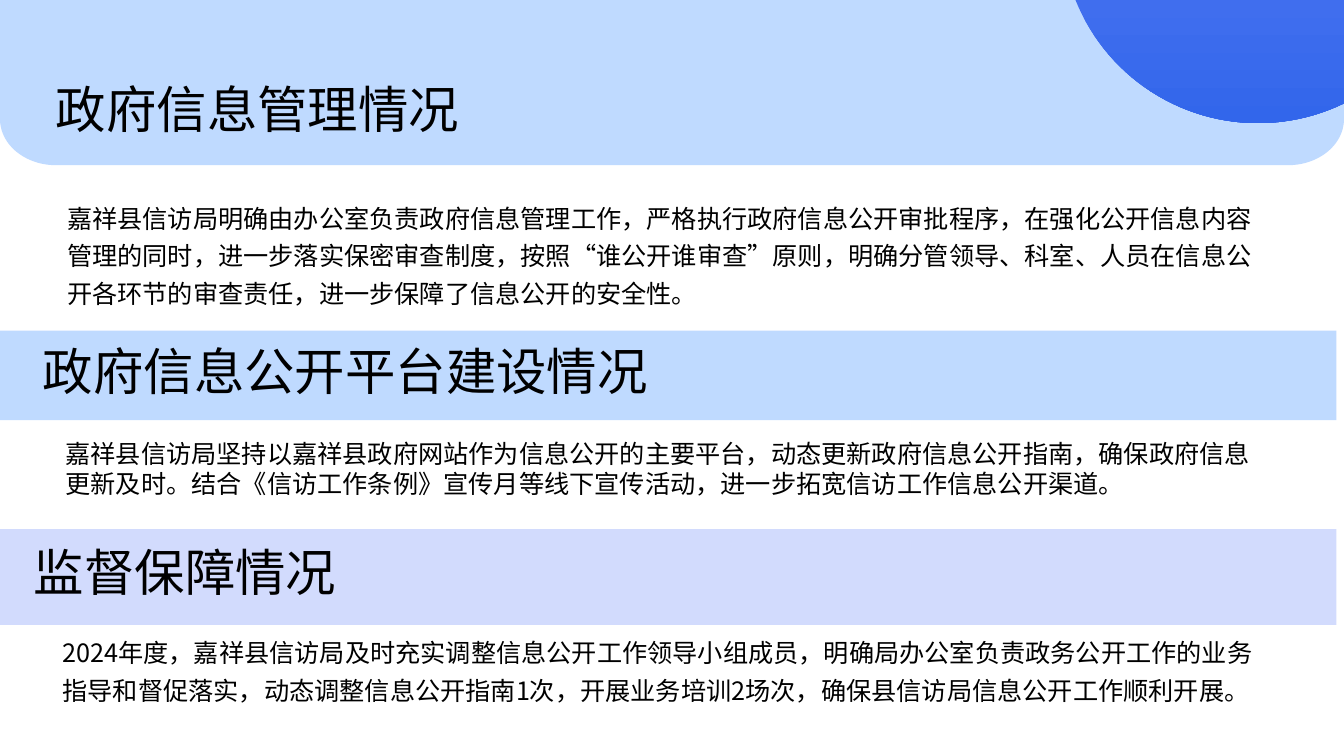
"""Build the slide on government information management, platform and supervision."""
from math import cos, radians, sin

from lxml import etree
from pptx import Presentation
from pptx.dml.color import RGBColor
from pptx.enum.shapes import MSO_SHAPE
from pptx.enum.text import MSO_ANCHOR, MSO_AUTO_SIZE, PP_ALIGN
from pptx.oxml.ns import qn
from pptx.util import Pt

RECT = MSO_SHAPE.RECTANGLE
TOP = MSO_ANCHOR.TOP
NO_FIT = MSO_AUTO_SIZE.NONE
LEFT = PP_ALIGN.LEFT
FONT = "Noto Sans CJK SC"
COLORS = {"text": "000000", "blue": "BFDAFF", "lilac": "D2DBFD",
          "disc_top": "406EEE", "disc_bottom": "3266EB"}
W, H = 960, 540


def arc(cx, cy, rx, ry, start, end, steps=40):
    angles = [radians(start + (end - start) * i / steps) for i in range(steps + 1)]
    return [(Pt(cx + rx * cos(a)), Pt(cy + ry * sin(a))) for a in angles]


def write(sp, text, size, leading, left=0, top=0):
    tf = sp.text_frame
    tf.word_wrap = True
    tf.auto_size = NO_FIT
    tf.vertical_anchor = TOP
    tf.margin_left, tf.margin_top = Pt(left), Pt(top)
    tf.margin_right = tf.margin_bottom = 0
    p = tf.paragraphs[0]
    p.alignment = LEFT
    p.line_spacing = Pt(leading)
    p.space_before = Pt(0)
    r = p.add_run()
    r.text = text
    r.font.size = Pt(size)
    r.font.name = FONT
    r.font.color.rgb = RGBColor.from_string(COLORS["text"])
    etree.SubElement(r.font._element, qn("a:ea"), typeface=FONT)


prs = Presentation()
prs.slide_width, prs.slide_height = Pt(W), Pt(H)
s = prs.slides.add_slide(prs.slide_layouts[5])

header_h, rx, ry = 118, 40, 33
header_points = ([(Pt(W), 0)]
                 + arc(W - rx, header_h - ry, rx, ry, 0, 90)
                 + arc(rx, header_h - ry, rx, ry, 90, 180))
disc_points = [(Pt(W), 0)] + arc(898.6, -52.6, 140.6, 140.6, 64.2, 158)

outlines = []
for start_x, points in ((0, header_points), (768, disc_points)):
    fb = s.shapes.build_freeform(Pt(start_x), 0)
    fb.add_line_segments(points, close=True)
    sp = fb.convert_to_shape()
    sp.shadow.inherit = False
    sp.line.fill.background()
    outlines.append(sp)
header, disc = outlines
header.fill.solid()
header.fill.fore_color.rgb = RGBColor.from_string(COLORS["blue"])
disc.fill.gradient()
disc.fill.gradient_angle = 270
for stop, name in zip(disc.fill.gradient_stops, ("disc_top", "disc_bottom")):
    stop.color.rgb = RGBColor.from_string(COLORS[name])
for stop, position in zip(disc.fill.gradient_stops, (0, 1)):
    stop.position = position

title = s.shapes.title
title.left, title.top, title.width, title.height = Pt(40), Pt(47), Pt(544), Pt(70)
write(title, "政府信息管理情况", 36, 49, top=3)
disc._element.addnext(title._element)

bands = [
    (-0.7, 236.2, 955.4, 64, "blue", "政府信息公开平台建设情况", 43, 31.4, 6.6),
    (0, 378, 954.7, 68.4, "lilac", "监督保障情况", 49, 24.2, 3),
]
for x, y, w, h, color, heading, leading, left, top in bands:
    sp = s.shapes.add_shape(RECT, Pt(x), Pt(y), Pt(w), Pt(h))
    sp.shadow.inherit = False
    sp.fill.solid()
    sp.fill.fore_color.rgb = RGBColor.from_string(COLORS[color])
    sp.line.fill.background()
    write(sp, heading, 36, leading, left, top)

bodies = [
    (48, 138.5, 862, 98, 27,
     "嘉祥县信访局明确由办公室负责政府信息管理工作，严格执行政府信息公开审批程序，"
     "在强化公开信息内容管理的同时，进一步落实保密审查制度，按照“谁公开谁审查”原则，"
     "明确分管领导、科室、人员在信息公开各环节的审查责任，进一步保障了信息公开的安全性。"),
    (46.8, 312, 854.6, 55, 21.6,
     "嘉祥县信访局坚持以嘉祥县政府网站作为信息公开的主要平台，动态更新政府信息公开指南，"
     "确保政府信息更新及时。结合《信访工作条例》宣传月等线下宣传活动，"
     "进一步拓宽信访工作信息公开渠道。"),
    (44.6, 449, 865.4, 58, 27,
     "2024年度，嘉祥县信访局及时充实调整信息公开工作领导小组成员，"
     "明确局办公室负责政务公开工作的业务指导和督促落实，动态调整信息公开指南1次，"
     "开展业务培训2场次，确保县信访局信息公开工作顺利开展。"),
]
for x, y, w, h, leading, text in bodies:
    sp = s.shapes.add_textbox(Pt(x), Pt(y), Pt(w), Pt(h))
    write(sp, text, 18, leading, top=1)

prs.save("out.pptx")
